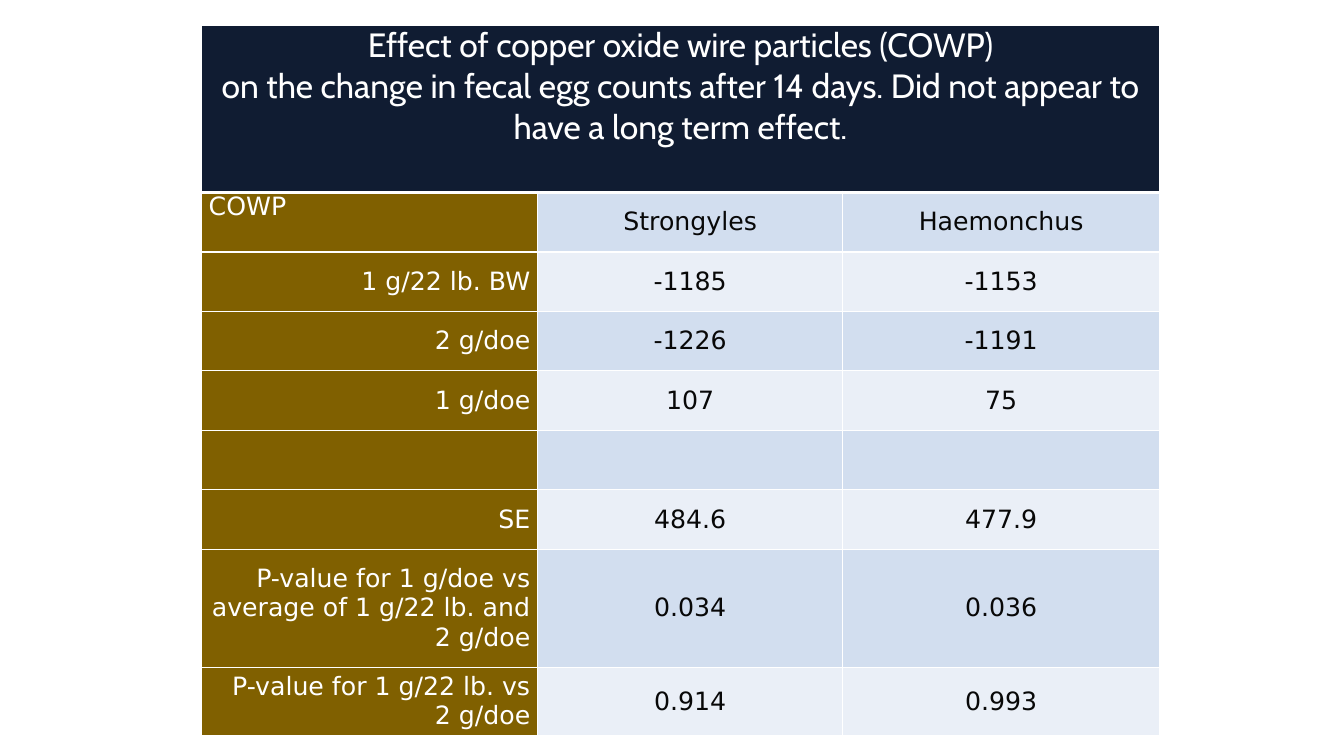
from lxml.etree import SubElement
from pptx import Presentation
from pptx.dml.color import RGBColor
from pptx.enum.text import MSO_ANCHOR, PP_ALIGN
from pptx.oxml.ns import qn
from pptx.util import Inches, Pt

TITLE = [
    "Effect of copper oxide wire particles (COWP)",
    "on the change in fecal egg counts after 14 days. "
    "Did not appear to have a long term effect.",
]
RESULTS = [
    ("COWP", "Strongyles", "Haemonchus"),
    ("1 g/22 lb. BW", "-1185", "-1153"),
    ("2 g/doe", "-1226", "-1191"),
    ("1 g/doe", "107", "75"),
    ("", "", ""),
    ("SE", "484.6", "477.9"),
    ("P-value for 1 g/doe vs average of 1 g/22 lb. and 2 g/doe", "0.034", "0.036"),
    ("P-value for 1 g/22 lb. vs 2 g/doe", "0.914", "0.993"),
]
COLUMN_WIDTHS = [3.33, 3.03, 3.14]
ROW_HEIGHTS = [1.66] + [0.59] * 6 + [1.17, 0.68]

WHITE, INK = "FFFFFF", "080808"
NAVY, BROWN = "101C32", "806000"
BANDS = ["D2DEEF", "EAEFF7"]

TITLE_FORMAT = {"name": "Cabin", "size": Pt(24)}
BODY_FORMAT = {"name": "DejaVu Sans", "size": Pt(18)}
CELL_MARGINS = {
    "margin_left": Inches(0.07),
    "margin_right": Inches(0.07),
    "margin_top": 0,
    "margin_bottom": 0,
}


def rgb(hex_color):
    return RGBColor.from_string(hex_color)


def set_all(target, values):
    for attribute, value in values.items():
        setattr(target, attribute, value)


def add_borders(cell, bottom_width=1):
    """Draw white rules round a cell; call before the fill is set."""
    properties = cell._tc.get_or_add_tcPr()
    for side, width in (("L", 1), ("R", 1), ("T", 1), ("B", bottom_width)):
        rule = SubElement(properties, qn(f"a:ln{side}"), w=str(Pt(width)))
        SubElement(SubElement(rule, qn("a:solidFill")), qn("a:srgbClr"), val=WHITE)


def fill_cell(cell, lines, fill, color, font_format, align, anchor, bottom_width=1):
    add_borders(cell, bottom_width)
    cell.fill.solid()
    cell.fill.fore_color.rgb = rgb(fill)
    set_all(cell, {**CELL_MARGINS, "vertical_anchor": anchor})
    cell.text = "\n".join(lines)
    for paragraph in cell.text_frame.paragraphs:
        paragraph.alignment = align
        set_all(paragraph.font, font_format)
        for run in paragraph.runs:
            set_all(run.font, font_format)
            run.font.color.rgb = rgb(color)


def add_title_row(table):
    title, last = table.cell(0, 0), table.cell(0, len(COLUMN_WIDTHS) - 1)
    title.merge(last)
    fill_cell(title, TITLE, NAVY, WHITE, TITLE_FORMAT,
              PP_ALIGN.CENTER, MSO_ANCHOR.TOP, bottom_width=3)


def add_result_rows(table):
    for index, (treatment, *values) in enumerate(RESULTS):
        row = index + 1
        heading = index == 0
        fill_cell(table.cell(row, 0), [treatment], BROWN, WHITE, BODY_FORMAT,
                  PP_ALIGN.LEFT if heading else PP_ALIGN.RIGHT,
                  MSO_ANCHOR.TOP if heading else MSO_ANCHOR.MIDDLE)
        for column, value in enumerate(values, start=1):
            fill_cell(table.cell(row, column), [value], BANDS[index % 2], INK,
                      BODY_FORMAT, PP_ALIGN.CENTER, MSO_ANCHOR.MIDDLE)


def add_egg_count_table(slide, left, top):
    table = slide.shapes.add_table(
        len(ROW_HEIGHTS), len(COLUMN_WIDTHS), Inches(left), Inches(top),
        Inches(sum(COLUMN_WIDTHS)), Inches(sum(ROW_HEIGHTS))).table
    for column, width in zip(table.columns, COLUMN_WIDTHS):
        column.width = Inches(width)
    for row, height in zip(table.rows, ROW_HEIGHTS):
        row.height = Inches(height)
    add_title_row(table)
    add_result_rows(table)


def main():
    deck = Presentation()
    deck.slide_width, deck.slide_height = Inches(13.33), Inches(7.5)
    slide = deck.slides.add_slide(deck.slide_layouts[6])
    add_egg_count_table(slide, 2, 0.25)
    deck.save("out.pptx")


if __name__ == "__main__":
    main()
